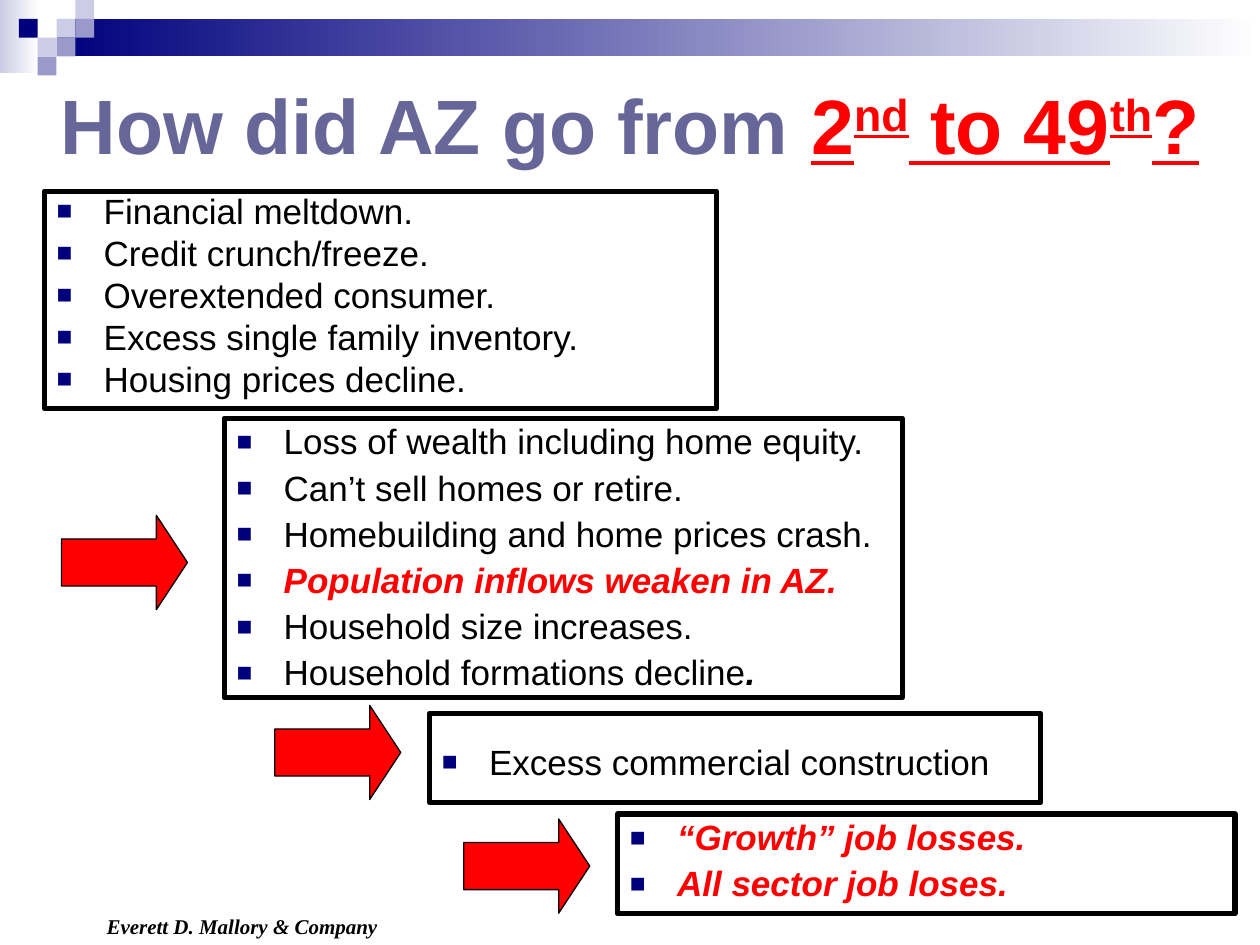
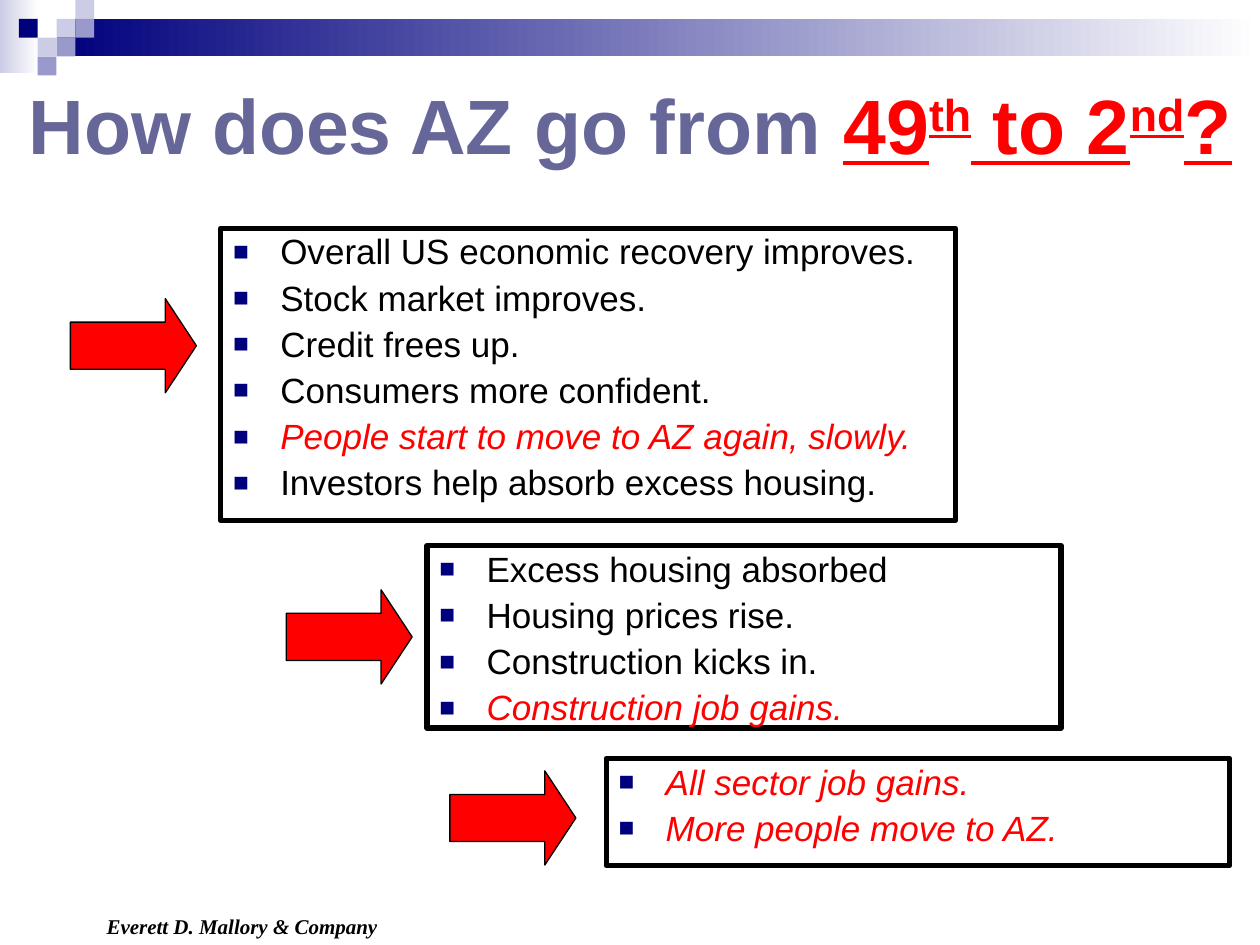
"""Build two slides that trace Arizona's fall and recovery in job growth."""
from dataclasses import dataclass

from lxml.etree import SubElement
from pptx import Presentation
from pptx.dml.color import RGBColor
from pptx.enum.shapes import MSO_SHAPE
from pptx.enum.text import MSO_ANCHOR, MSO_AUTO_SIZE, PP_ALIGN
from pptx.oxml.ns import qn
from pptx.util import Cm, Pt


@dataclass(frozen=True)
class Theme:
    navy: str = "00007D"
    violet: str = "9999CC"
    lavender: str = "CCCCE6"
    title: str = "666699"
    red: str = "FF0000"
    black: str = "000000"
    white: str = "FFFFFF"
    font: str = "Arial"
    footer_font: str = "Times New Roman"
    title_size: float = 44
    list_size: float = 20
    footer_size: float = 12
    list_gap: float = 4.8
    box_line: float = 3
    arrow_line: float = 0.75


THEME = Theme()


@dataclass(frozen=True)
class Area:
    left: float
    top: float
    width: float
    height: float


@dataclass(frozen=True)
class Piece:
    text: str
    raised: bool = False


@dataclass(frozen=True)
class Item:
    text: str
    color: str = THEME.black
    bold: bool = False
    italic: bool = False
    strong_ending: str = ""


@dataclass(frozen=True)
class ListBox:
    area: Area
    items: tuple[Item, ...]
    line_spacing: float = 0.9
    top_inset: float = 0.13


@dataclass(frozen=True)
class Stage:
    question: str
    ranks: tuple[Piece, ...]
    boxes: tuple[ListBox, ...]
    arrows: tuple[tuple[float, float], ...]


SQUARE = 0.38
SQUARES = {
    THEME.lavender: ((3, 1), (4, 0), (2, 2)),
    THEME.violet: ((4, 1), (3, 2), (2, 3)),
    THEME.navy: ((1, 1),),
}
BANDS = (
    (Area(0, 0, 0.79, 1.47), THEME.lavender),
    (Area(1.14, 0.38, 24.26, 0.76), THEME.navy),
)
TITLE_AREA = Area(0, 1.24, 25.4, 2.51)
FOOTER_AREA = Area(1.9, 18.29, 6.35, 0.76)
FOOTER_TEXT = "Everett D. Mallory & Company"
ARROW_WIDTH, ARROW_HEIGHT = 2.54, 1.9
BULLET_INDENT = Cm(0.95)

STAGES = (
    Stage(
        "How did AZ go from ",
        (Piece("2"), Piece("nd", True), Piece(" to 49"), Piece("th", True), Piece("?")),
        (
            ListBox(Area(0.89, 3.86, 13.56, 4.37), (
                Item("Financial meltdown."),
                Item("Credit crunch/freeze."),
                Item("Overextended consumer."),
                Item("Excess single family inventory."),
                Item("Housing prices decline."),
            ), line_spacing=0.8),
            ListBox(Area(4.52, 8.43, 13.67, 5.64), (
                Item("Loss of wealth including home equity."),
                Item("Can’t sell homes or retire."),
                Item("Homebuilding and home prices crash."),
                Item("Population inflows weaken in AZ.", THEME.red, True, True),
                Item("Household size increases."),
                Item("Household formations decline", strong_ending="."),
            )),
            ListBox(Area(8.66, 14.38, 12.32, 1.8), (
                Item("Excess commercial construction"),
            ), top_inset=0.64),
            ListBox(Area(12.45, 16.41, 12.45, 2.01), (
                Item("“Growth” job losses.", THEME.red, True, True),
                Item("All sector job loses.", THEME.red, True, True),
            )),
        ),
        ((1.24, 10.39), (5.54, 14.22), (9.35, 16.51)),
    ),
    Stage(
        "How does AZ go from ",
        (Piece("49"), Piece("th", True), Piece(" to 2"), Piece("nd", True), Piece("?")),
        (
            ListBox(Area(4.45, 4.6, 14.81, 5.89), (
                Item("Overall US economic recovery improves."),
                Item("Stock market improves."),
                Item("Credit frees up."),
                Item("Consumers more confident."),
                Item("People start to move to AZ again, slowly.", THEME.red, italic=True),
                Item("Investors help absorb excess housing."),
            )),
            ListBox(Area(8.61, 11, 12.78, 3.68), (
                Item("Excess housing absorbed"),
                Item("Housing prices rise."),
                Item("Construction kicks in."),
                Item("Construction job gains.", THEME.red, italic=True),
            )),
            ListBox(Area(12.22, 15.29, 12.57, 2.16), (
                Item("All sector job gains.", THEME.red, italic=True),
                Item("More people move to AZ.", THEME.red, italic=True),
            )),
        ),
        ((1.42, 6.02), (5.77, 11.89), (9.07, 15.54)),
    ),
)


def rgb(color: str) -> RGBColor:
    """Turn a hexadecimal colour into a colour object."""
    return RGBColor.from_string(color)


def lengths(area: Area) -> tuple[Cm, Cm, Cm, Cm]:
    """Give the area's position and size as lengths."""
    return Cm(area.left), Cm(area.top), Cm(area.width), Cm(area.height)


def place(shape, area: Area) -> None:
    """Move and resize a shape."""
    shape.left, shape.top, shape.width, shape.height = lengths(area)


def format_font(font, name: str, size: float, color: str, bold: bool, italic: bool) -> None:
    """Apply typeface, size, colour and emphasis."""
    font.name, font.size, font.bold, font.italic = name, Pt(size), bold, italic
    font.color.rgb = rgb(color)


def prepare_frame(frame, anchor: MSO_ANCHOR, top_inset: float = 0.13) -> None:
    """Set wrapping, fit, insets and anchor of a text frame."""
    frame.word_wrap = True
    frame.auto_size = MSO_AUTO_SIZE.NONE
    frame.vertical_anchor = anchor
    frame.margin_left = frame.margin_right = Cm(0.25)
    frame.margin_top, frame.margin_bottom = Cm(top_inset), Cm(0.13)


def add_preset(slide, preset: MSO_SHAPE, area: Area):
    """Add a preset shape without shadow or outline."""
    shape = slide.shapes.add_shape(preset, *lengths(area))
    shape.shadow.inherit = False
    shape.line.fill.background()
    return shape


def add_band(slide, area: Area, color: str):
    """Add a band that fades to white from left to right."""
    band = add_preset(slide, MSO_SHAPE.RECTANGLE, area)
    band.fill.gradient()
    band.fill.gradient_angle = 0
    for stop, stop_color in zip(band.fill.gradient_stops, (color, THEME.white)):
        stop.color.rgb = rgb(stop_color)
    return band


def add_square(slide, column: int, row: int, color: str):
    """Add one square of the corner mosaic."""
    area = Area(column * SQUARE, row * SQUARE, SQUARE, SQUARE)
    square = add_preset(slide, MSO_SHAPE.RECTANGLE, area)
    square.fill.solid()
    square.fill.fore_color.rgb = rgb(color)
    return square


def add_footer(slide):
    """Add the company line at the foot."""
    footer = slide.shapes.add_textbox(*lengths(FOOTER_AREA))
    prepare_frame(footer.text_frame, MSO_ANCHOR.TOP)
    paragraph = footer.text_frame.paragraphs[0]
    paragraph.text = FOOTER_TEXT
    format_font(paragraph.font, THEME.footer_font, THEME.footer_size, THEME.black, True, True)
    return footer


def decorate_layout(layout, slide) -> None:
    """Draw the bands, mosaic and footer, then move them to the layout."""
    shapes = [add_band(slide, area, color) for area, color in BANDS]
    for color, cells in SQUARES.items():
        shapes += [add_square(slide, column, row, color) for column, row in cells]
    shapes.append(add_footer(slide))
    for number, shape in enumerate(shapes, start=100):
        shape.element.xpath(".//p:cNvPr")[0].set("id", str(number))
        layout.shapes.element.append(shape.element)


def fill_title(title, stage: Stage) -> None:
    """Write the question with its ranks underlined in red."""
    place(title, TITLE_AREA)
    prepare_frame(title.text_frame, MSO_ANCHOR.MIDDLE)
    paragraph = title.text_frame.paragraphs[0]
    paragraph.alignment = PP_ALIGN.CENTER
    format_font(paragraph.font, THEME.font, THEME.title_size, THEME.title, True, False)
    paragraph.add_run().text = stage.question
    for piece in stage.ranks:
        run = paragraph.add_run()
        run.text = piece.text
        run.font.underline = True
        run.font.color.rgb = rgb(THEME.red)
        if piece.raised:
            run.font._element.set("baseline", "30000")


def add_bullet(paragraph) -> None:
    """Give a paragraph a hanging navy square bullet."""
    properties = paragraph._p.get_or_add_pPr()
    properties.set("marL", str(BULLET_INDENT))
    properties.set("indent", str(-BULLET_INDENT))
    color = SubElement(properties, qn("a:buClr"))
    SubElement(color, qn("a:srgbClr"), val=THEME.navy)
    SubElement(properties, qn("a:buSzPct"), val="75000")
    SubElement(properties, qn("a:buFont"), typeface=THEME.font)
    SubElement(properties, qn("a:buChar"), char="■")


def fill_list(shape, box: ListBox) -> None:
    """Outline a box and write its bulleted items."""
    place(shape, box.area)
    shape.line.color.rgb = rgb(THEME.black)
    shape.line.width = Pt(THEME.box_line)
    frame = shape.text_frame
    prepare_frame(frame, MSO_ANCHOR.TOP, box.top_inset)
    for index, item in enumerate(box.items):
        paragraph = frame.add_paragraph() if index else frame.paragraphs[0]
        add_bullet(paragraph)
        paragraph.line_spacing = box.line_spacing
        paragraph.space_before = Pt(THEME.list_gap if index else 0)
        format_font(paragraph.font, THEME.font, THEME.list_size,
                    item.color, item.bold, item.italic)
        paragraph.add_run().text = item.text
        if item.strong_ending:
            ending = paragraph.add_run()
            ending.text = item.strong_ending
            ending.font.bold = ending.font.italic = True


def add_arrow(slide, left: float, top: float) -> None:
    """Add a red arrow that leads to the next box."""
    area = Area(left, top, ARROW_WIDTH, ARROW_HEIGHT)
    arrow = add_preset(slide, MSO_SHAPE.RIGHT_ARROW, area)
    arrow.adjustments[1] = 0.33
    arrow.fill.solid()
    arrow.fill.fore_color.rgb = rgb(THEME.red)
    arrow.line.color.rgb = rgb(THEME.black)
    arrow.line.width = Pt(THEME.arrow_line)


def main() -> None:
    """Build and save the presentation."""
    presentation = Presentation()
    presentation.slide_width, presentation.slide_height = Cm(25.4), Cm(19.05)
    layout = presentation.slide_layouts[1]
    for index, stage in enumerate(STAGES):
        slide = presentation.slides.add_slide(layout)
        if index == 0:
            decorate_layout(layout, slide)
        fill_title(slide.shapes.title, stage)
        first_box, *other_boxes = stage.boxes
        fill_list(slide.placeholders[1], first_box)
        for box in other_boxes:
            fill_list(slide.shapes.add_textbox(*lengths(box.area)), box)
        for left, top in stage.arrows:
            add_arrow(slide, left, top)
    presentation.save("out.pptx")


if __name__ == "__main__":
    main()
